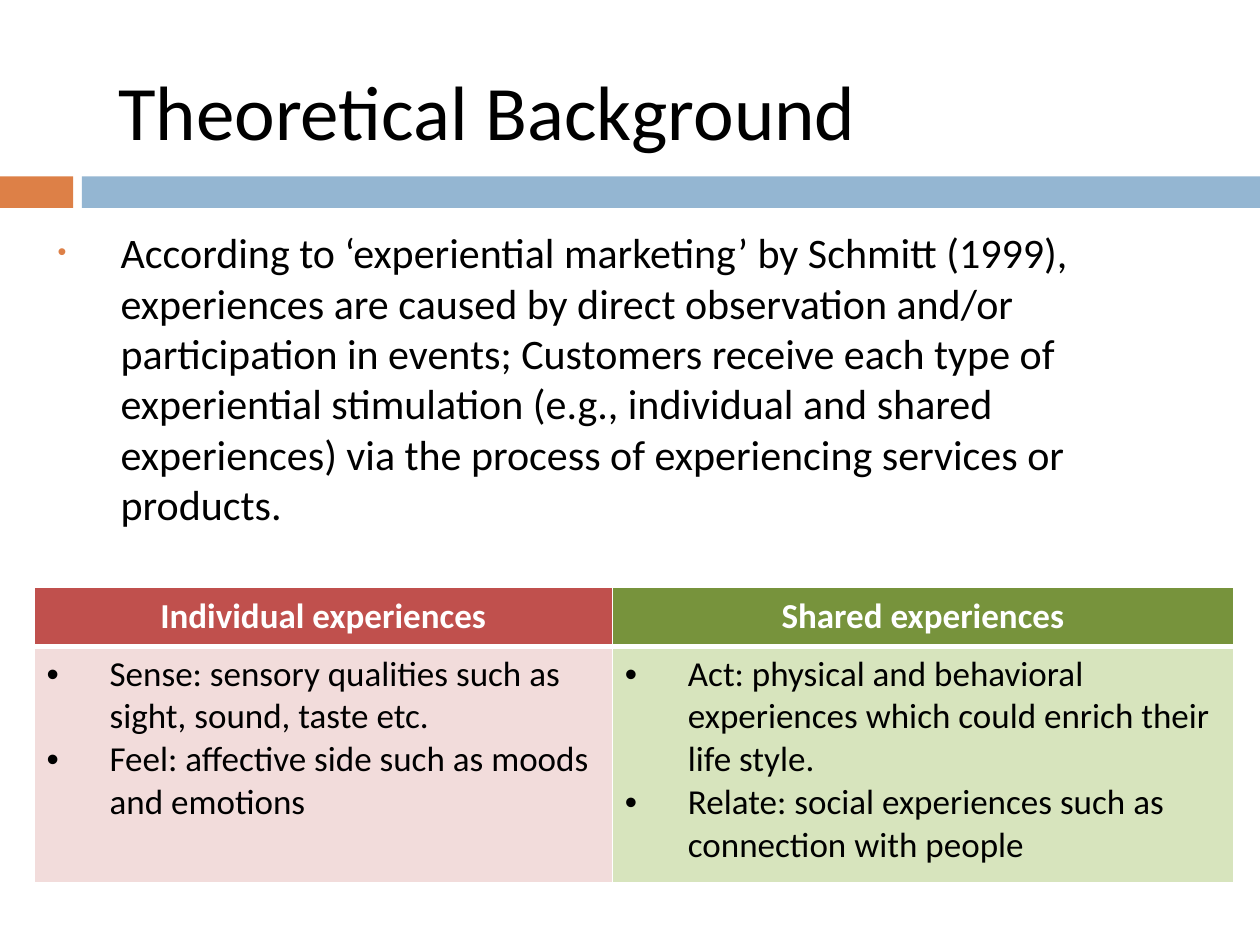
from lxml import etree
from pptx import Presentation
from pptx import util as u
from pptx.dml.color import RGBColor
from pptx.enum import shapes, text
from pptx.oxml import ns

Inches, Pt = u.Inches, u.Pt
FONT = "Calibri"
COLORS = {
    "orange": "DD8047", "blue": "94B6D2", "black": "000000", "white": "FFFFFF",
    "red": "C0504D", "green": "77933C", "pale red": "F2DCDB", "pale green": "D7E4BD",
}
BODY = (
    "According to ‘experiential marketing’ by Schmitt (1999), experiences are caused by "
    "direct observation and/or participation in events; Customers receive each type of "
    "experiential stimulation (e.g., individual and shared experiences) via the process "
    "of experiencing services or products."
)
# Heading, header fill, body fill, column width, points
COLUMNS = [
    ("Individual experiences", "red", "pale red", 4.59,
     ["Sense: sensory qualities such as sight, sound, taste etc.",
      "Feel: affective side such as moods and emotions"]),
    ("Shared experiences", "green", "pale green", 4.93,
     ["Act: physical and behavioral experiences which could enrich their life style.",
      "Relate: social experiences such as connection with people"]),
]


def color(name):
    return RGBColor.from_string(COLORS[name])


def style_text(frame, size, color_name, bold=False):
    for paragraph in frame.paragraphs:
        for run in paragraph.runs:
            run.font.name = FONT
            run.font.size = Pt(size)
            run.font.bold = bold
            run.font.color.rgb = color(color_name)


def add_bullet(paragraph, color_name=None, percent=100):
    properties = paragraph._p.get_or_add_pPr()
    properties.set("marL", str(Inches(0.5)))
    properties.set("indent", str(-Inches(0.5)))
    if color_name:
        bullet_color = etree.SubElement(properties, ns.qn("a:buClr"))
        etree.SubElement(bullet_color, ns.qn("a:srgbClr"), val=COLORS[color_name])
    etree.SubElement(properties, ns.qn("a:buSzPct"), val=str(percent * 1000))
    etree.SubElement(properties, ns.qn("a:buFont"), typeface="Arial")
    etree.SubElement(properties, ns.qn("a:buChar"), char="•")


def add_bar(slide, left, width, color_name):
    bar = slide.shapes.add_shape(
        shapes.MSO_SHAPE.RECTANGLE, Inches(left), Inches(1.4), Inches(width), Inches(0.25))
    bar.shadow.inherit = False
    bar.fill.solid()
    bar.fill.fore_color.rgb = color(color_name)
    bar.line.fill.background()


def add_text(slide, left, top, width, height, wording, size):
    box = slide.shapes.add_textbox(Inches(left), Inches(top), Inches(width), Inches(height))
    frame = box.text_frame
    frame.word_wrap = True
    frame.text = wording
    style_text(frame, size, "black")
    return frame


def set_borders(cell, top, bottom):
    properties = cell._tc.get_or_add_tcPr()
    sides = {"lnL": 1, "lnR": 1, "lnT": top, "lnB": bottom}
    for position, (side, width) in enumerate(sides.items()):
        line = etree.Element(ns.qn(f"a:{side}"), w=str(Pt(width)))
        fill = etree.SubElement(line, ns.qn("a:solidFill"))
        etree.SubElement(fill, ns.qn("a:srgbClr"), val=COLORS["white"])
        properties.insert(position, line)


def fill_cell(cell, wording, fill_name, text_color, bold=False):
    cell.fill.solid()
    cell.fill.fore_color.rgb = color(fill_name)
    cell.text_frame.text = wording
    style_text(cell.text_frame, 20, text_color, bold)


def add_experience_table(slide):
    table = slide.shapes.add_table(
        2, len(COLUMNS), Inches(0.27), Inches(4.66), Inches(9.52), Inches(2.35)).table
    table.rows[0].height = Inches(0.47)
    table.rows[1].height = Inches(1.88)
    for index, (heading, dark, pale, width, points) in enumerate(COLUMNS):
        table.columns[index].width = Inches(width)
        header, body = table.cell(0, index), table.cell(1, index)
        fill_cell(header, heading, dark, "white", bold=True)
        header.vertical_anchor = text.MSO_ANCHOR.MIDDLE
        header.text_frame.paragraphs[0].alignment = text.PP_ALIGN.CENTER
        set_borders(header, top=1, bottom=3)

        fill_cell(body, "\n".join(points), pale, "black")
        for paragraph in body.text_frame.paragraphs:
            add_bullet(paragraph)
        set_borders(body, top=3, bottom=1)


def main():
    presentation = Presentation()
    presentation.slide_width = Inches(10)
    presentation.slide_height = Inches(7.5)
    slide = presentation.slides.add_slide(presentation.slide_layouts[6])

    # Divider bars
    add_bar(slide, 0, 0.58, "orange")
    add_bar(slide, 0.65, 9.35, "blue")

    # Body and title
    body = add_text(slide, 0.36, 1.75, 9.23, 2.59, BODY, 24)
    body.paragraphs[0].space_before = Pt(7)
    add_bullet(body.paragraphs[0], "orange", 60)
    title = add_text(slide, 0.84, 0.33, 8.92, 1.08, "Theoretical Background", 44)
    title.vertical_anchor = text.MSO_ANCHOR.MIDDLE

    # Comparison of experience types
    add_experience_table(slide)
    presentation.save("out.pptx")


if __name__ == "__main__":
    main()
